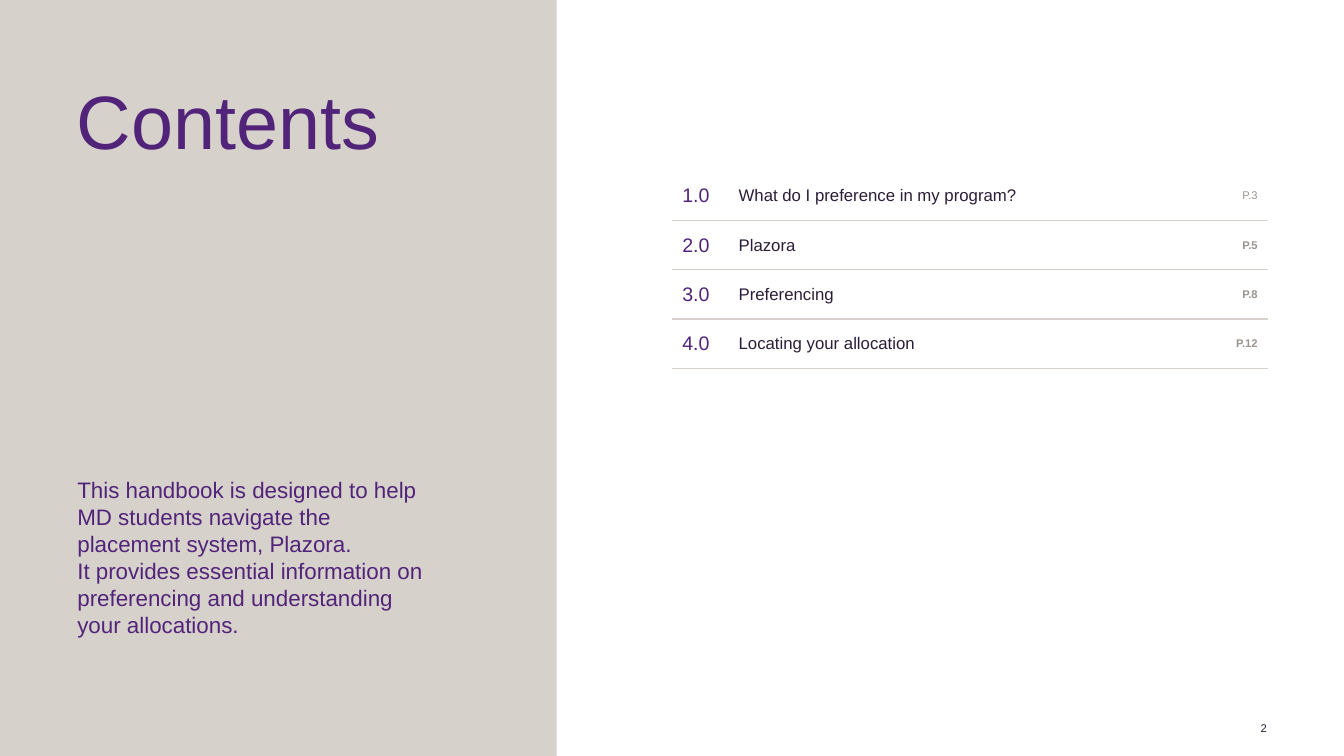
"""Build the contents slide of a student placement handbook."""
from lxml.etree import SubElement
from pptx import Presentation
from pptx.dml.color import RGBColor as Rgb
from pptx.enum.shapes import MSO_SHAPE as Kind
from pptx.enum.text import MSO_ANCHOR as Anchor, PP_ALIGN as Align
from pptx.oxml.ns import qn
from pptx.util import Cm, Pt

PURPLE, INK, GREY, STONE = "51247A", "2B1D37", "999490", "D7D1CC"
TITLE = "Contents"
INTRO = ("This handbook is designed to help MD students navigate the "
         "placement system, Plazora.\vIt provides essential information on "
         "preferencing and understanding your allocations.")
NUMBER = "2"
ITEMS = [
    ("1.0", "What do I preference in my program?", "P.3"),
    ("2.0", "Plazora", "P.5"),
    ("3.0", "Preferencing", "P.8"),
    ("4.0", "Locating your allocation", "P.12"),
]
COLUMNS = [
    (1.42, 14, PURPLE, Align.LEFT),
    (11.76, 12, INK, Align.LEFT),
    (1.83, 8, GREY, Align.RIGHT),
]
ROW = 1.24


def paint(target, color):
    target.solid()
    target.fore_color.rgb = Rgb.from_string(color)


def style(frame, size, color, align=Align.LEFT, bold=False):
    for para in frame.paragraphs:
        para.alignment = align
        for run in para.runs:
            font = run.font
            font.name, font.size, font.bold = "Arial", Pt(size), bold
            paint(font.fill, color)


def write(slide, text, place, size, color, align=Align.LEFT):
    frame = slide.shapes.add_textbox(*map(Cm, place)).text_frame
    frame.word_wrap = True
    frame.margin_left = frame.margin_right = 0
    frame.margin_top = frame.margin_bottom = 0
    frame.text = text
    style(frame, size, color, align)
    return frame


def rule(cell, first):
    props = cell._tc.get_or_add_tcPr()
    for spot, side in enumerate("LRTB"):
        line = SubElement(props, qn(f"a:ln{side}"), w=str(Pt(1)))
        if side == "B" or (side == "T" and not first):
            fill = SubElement(line, qn("a:solidFill"))
            SubElement(fill, qn("a:srgbClr"), val=STONE)
        else:
            SubElement(line, qn("a:noFill"))
        props.insert(spot, line)


def list_items(slide):
    width = sum(col[0] for col in COLUMNS)
    table = slide.shapes.add_table(
        len(ITEMS), len(COLUMNS), Cm(16.94), Cm(4.32),
        Cm(width), Cm(ROW * len(ITEMS))).table
    table.first_row = table.horz_banding = False
    for col, (wide, *_) in zip(table.columns, COLUMNS):
        col.width = Cm(wide)
    for r, item in enumerate(ITEMS):
        table.rows[r].height = Cm(ROW)
        for c, (_, size, color, align) in enumerate(COLUMNS):
            cell = table.cell(r, c)
            cell.text = item[c]
            cell.vertical_anchor = Anchor.MIDDLE
            cell.fill.background()
            style(cell.text_frame, size, color, align, c == 2 and r > 0)
            rule(cell, r == 0)


def main():
    deck = Presentation()
    deck.slide_width, deck.slide_height = Cm(33.87), Cm(19.05)
    slide = deck.slides.add_slide(deck.slide_layouts[6])
    panel = slide.shapes.add_shape(
        Kind.RECTANGLE, 0, 0, Cm(14.03), deck.slide_height)
    panel.shadow.inherit = False
    paint(panel.fill, STONE)
    panel.line.fill.background()
    title = write(slide, TITLE, (1.94, 2.11, 9.4, 1.85), 54, PURPLE)
    title.paragraphs[0].line_spacing = 0.9
    write(slide, INTRO, (1.95, 12.01, 8.9, 4.1), 16, PURPLE)
    list_items(slide)
    page = write(slide, NUMBER, (31.14, 18.14, 0.79, 0.41), 8, INK, Align.RIGHT)
    page.vertical_anchor = Anchor.MIDDLE
    deck.save("out.pptx")


if __name__ == "__main__":
    main()
